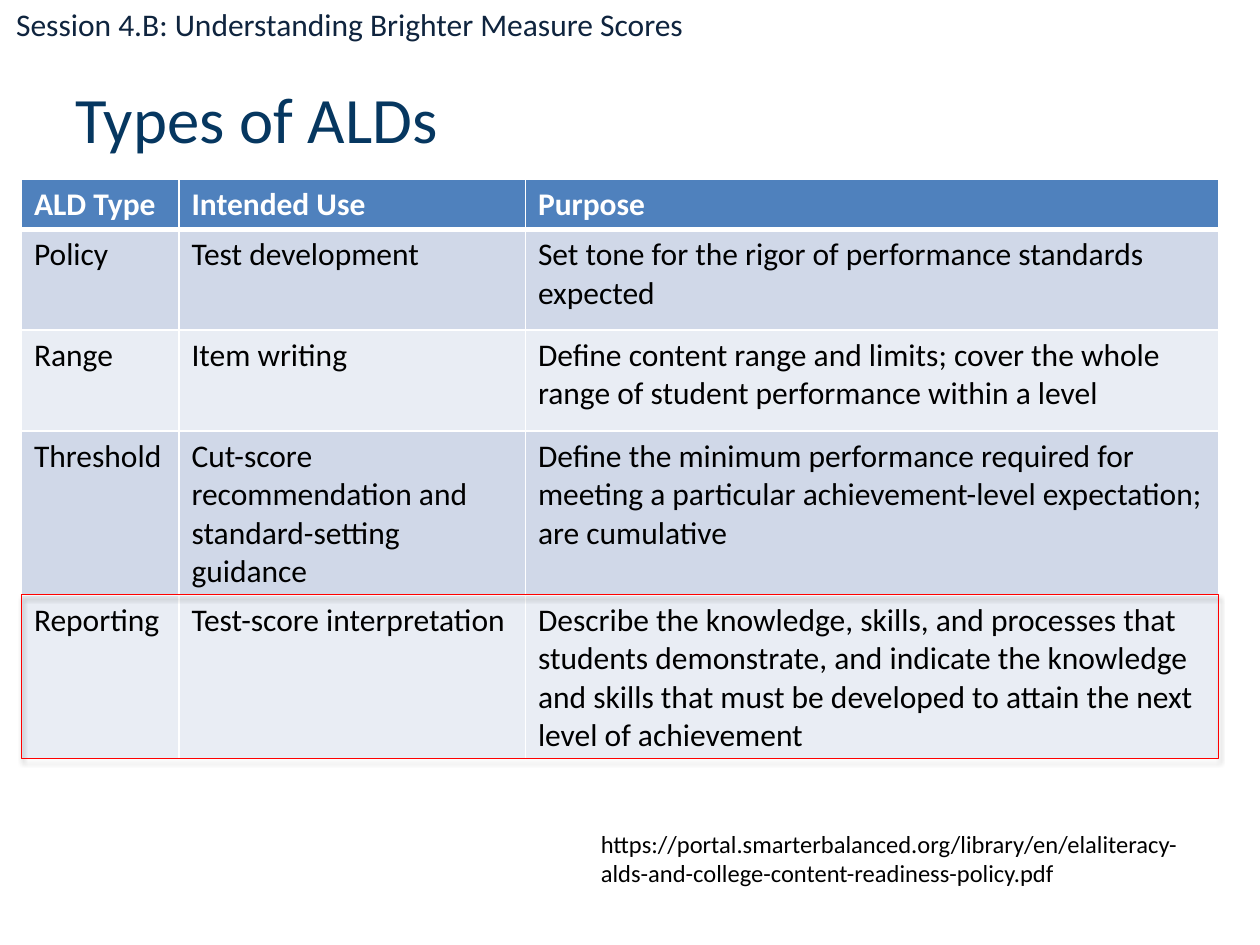
from dataclasses import dataclass
from typing import NamedTuple

from lxml.etree import SubElement
from pptx import Presentation
from pptx.dml.color import RGBColor
from pptx.enum.shapes import MSO_SHAPE
from pptx.enum.text import MSO_ANCHOR, MSO_AUTO_SIZE
from pptx.oxml.ns import qn
from pptx.util import Inches, Pt


@dataclass(frozen=True)
class Theme:
    font: str = "Calibri"
    title: str = "063760"
    session: str = "0F243E"
    body: str = "000000"
    white: str = "FFFFFF"
    header_fill: str = "4F81BD"
    band_fills: tuple[str, str] = ("D0D8E8", "E9EDF4")
    highlight: str = "FF0000"
    title_size: float = 37
    body_size: float = 18
    source_size: float = 14


class Box(NamedTuple):
    left: float
    top: float
    width: float
    height: float

    def lengths(self):
        return [Inches(value) for value in self]


class Label(NamedTuple):
    text: str
    box: Box
    size: float
    color: str
    wrap: bool = True
    anchor: MSO_ANCHOR = MSO_ANCHOR.TOP
    grow: bool = True


class AldType(NamedTuple):
    name: str
    intended_use: str
    purpose: str


THEME = Theme()

LABELS = [
    Label("Types of ALDs", Box(0.5, 0.43, 9, 1), THEME.title_size, THEME.title,
          anchor=MSO_ANCHOR.MIDDLE, grow=False),
    Label("https://portal.smarterbalanced.org/library/en/"
          "elaliteracy-alds-and-college-content-readiness-policy.pdf",
          Box(4.67, 6.53, 5, 0.57), THEME.source_size, THEME.body),
    Label("Session 4.B: Understanding Brighter Measure Scores",
          Box(0.03, -0.01, 5.64, 0.4), THEME.body_size, THEME.session, wrap=False),
]

ALD_ROWS = [
    AldType("ALD Type", "Intended Use", "Purpose"),
    AldType("Policy", "Test development",
            "Set tone for the rigor of performance standards expected"),
    AldType("Range", "Item writing",
            "Define content range and limits; cover the whole range of "
            "student performance within a level"),
    AldType("Threshold", "Cut-score recommendation and standard-setting guidance",
            "Define the minimum performance required for meeting a particular "
            "achievement-level expectation; are cumulative"),
    AldType("Reporting", "Test-score interpretation",
            "Describe the knowledge, skills, and processes that students "
            "demonstrate, and indicate the knowledge and skills that must be "
            "developed to attain the next level of achievement"),
]
COLUMN_WIDTHS = [1.25, 2.75, 5.5]
ROW_HEIGHTS = [0.38, 0.8, 0.8, 0.85, 1.04]
TABLE_BOX = Box(0.17, 1.42, sum(COLUMN_WIDTHS), sum(ROW_HEIGHTS))
REPORTING_BOX = Box(0.17, 4.72, 9.5, 1.3)


def format_text(text_frame, size: float, color: str, bold: bool = False) -> None:
    for paragraph in text_frame.paragraphs:
        for run in paragraph.runs:
            run.font.name = THEME.font
            run.font.size = Pt(size)
            run.font.bold = bold
            run.font.color.rgb = RGBColor.from_string(color)


def add_label(slide, label: Label) -> None:
    text_frame = slide.shapes.add_textbox(*label.box.lengths()).text_frame
    text_frame.word_wrap = label.wrap
    text_frame.vertical_anchor = label.anchor
    if label.grow:
        text_frame.auto_size = MSO_AUTO_SIZE.SHAPE_TO_FIT_TEXT
    text_frame.text = label.text
    format_text(text_frame, label.size, label.color)


def set_borders(cell, top: float, bottom: float) -> None:
    """Draw white cell borders; the side borders are one point wide."""
    properties = cell._tc.get_or_add_tcPr()
    widths = {"a:lnL": 1, "a:lnR": 1, "a:lnT": top, "a:lnB": bottom}
    for tag, width in widths.items():
        line = SubElement(properties, qn(tag), w=str(Pt(width)))
        fill = SubElement(line, qn("a:solidFill"))
        SubElement(fill, qn("a:srgbClr"), val=THEME.white)


def add_ald_table(slide) -> None:
    table = slide.shapes.add_table(
        len(ALD_ROWS), len(COLUMN_WIDTHS), *TABLE_BOX.lengths()).table
    for column, width in zip(table.columns, COLUMN_WIDTHS):
        column.width = Inches(width)
    for index, (row, height, ald_type) in enumerate(
            zip(table.rows, ROW_HEIGHTS, ALD_ROWS)):
        row.height = Inches(height)
        is_header = index == 0
        fill = THEME.header_fill if is_header else THEME.band_fills[(index - 1) % 2]
        for cell, text in zip(row.cells, ald_type):
            cell.text_frame.text = text
            format_text(cell.text_frame, THEME.body_size,
                        THEME.white if is_header else THEME.body, is_header)
            set_borders(cell, top=3 if index == 1 else 1, bottom=3 if is_header else 1)
            cell.fill.solid()
            cell.fill.fore_color.rgb = RGBColor.from_string(fill)


def add_highlight(slide, box: Box) -> None:
    """Frame a table row in red with a soft shadow below."""
    frame = slide.shapes.add_shape(MSO_SHAPE.RECTANGLE, *box.lengths())
    frame.fill.background()
    frame.line.color.rgb = RGBColor.from_string(THEME.highlight)
    frame.line.width = Pt(0.75)
    frame.shadow.inherit = False
    effects = frame._element.spPr.find(qn("a:effectLst"))
    shadow = SubElement(effects, qn("a:outerShdw"), blurRad=str(Pt(3.1)),
                        dist=str(Pt(1.8)), dir=str(90 * 60000), rotWithShape="0")
    color = SubElement(shadow, qn("a:srgbClr"), val=THEME.body)
    SubElement(color, qn("a:alpha"), val="35000")


def main() -> None:
    presentation = Presentation()
    presentation.slide_width = Inches(10)
    presentation.slide_height = Inches(7.5)
    slide = presentation.slides.add_slide(presentation.slide_layouts[6])
    title, *notes = LABELS
    add_label(slide, title)
    add_ald_table(slide)
    add_highlight(slide, REPORTING_BOX)
    for label in notes:
        add_label(slide, label)
    presentation.save("out.pptx")


if __name__ == "__main__":
    main()
